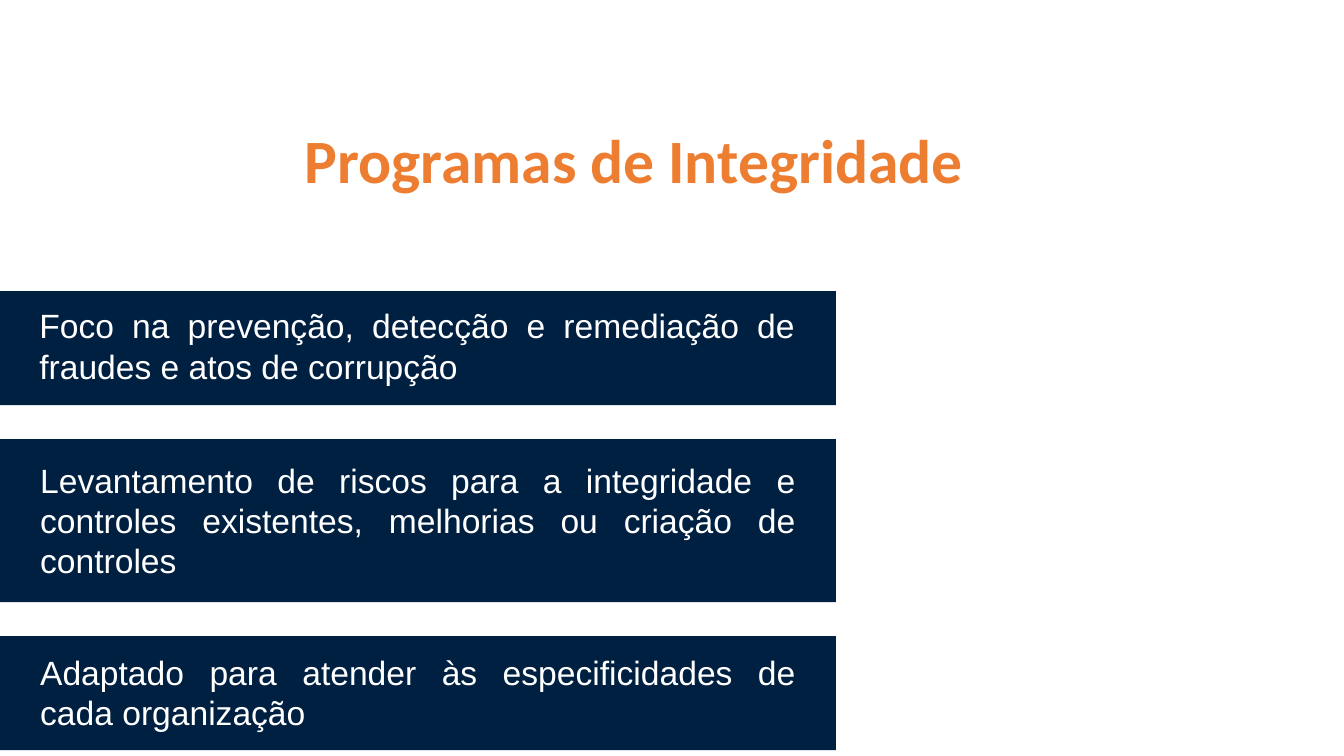
"""Build the "Programas de Integridade" slide."""
from dataclasses import dataclass

from pptx import Presentation
from pptx.dml.color import RGBColor
from pptx.enum import shapes, text
from pptx.util import Pt


@dataclass(frozen=True)
class Theme:
    navy: str = "002042"
    orange: str = "ED7D31"
    white: str = "FFFFFF"
    title_font: str = "Calibri"
    body_font: str = "Arial"
    title_size: int = 44
    body_size: int = 24


THEME = Theme()
BAR_TOP, BAR_GAP, BAR_WIDTH = 208, 24.2, 597
TEXT_WIDTH = 553.7
TOPICS = [
    ("Foco na prevenção, detecção e remediação de fraudes e atos de corrupção",
     81.4, 21, 6.5, 65.5),
    ("Levantamento de riscos para a integridade e controles existentes, "
     "melhorias ou criação de controles", 116.6, 21.6, 11.1, 94.3),
    ("Adaptado para atender às especificidades de cada organização",
     81.4, 21.6, 7.8, 65.5),
]


def add_text(s, content, left, top, width, height, *, font, size, color,
             align, bold=False, spacing=None,
             auto_size=text.MSO_AUTO_SIZE.NONE):
    sp = s.shapes.add_textbox(Pt(left), Pt(top), Pt(width), Pt(height))
    tf = sp.text_frame
    tf.word_wrap = True
    tf.auto_size = auto_size
    tf.vertical_anchor = text.MSO_ANCHOR.TOP
    p = tf.paragraphs[0]
    p.alignment = align
    p.line_spacing = spacing
    r = p.add_run()
    r.text = content
    r.font.name = font
    r.font.size = Pt(size)
    r.font.bold = bold
    r.font.color.rgb = RGBColor.from_string(color)


def add_bar(s, top, height):
    sp = s.shapes.add_shape(shapes.MSO_SHAPE.RECTANGLE, 0, Pt(top),
                            Pt(BAR_WIDTH), Pt(height))
    sp.shadow.inherit = False
    sp.fill.solid()
    sp.fill.fore_color.rgb = RGBColor.from_string(THEME.navy)
    sp.line.fill.background()


def main():
    prs = Presentation()
    prs.slide_width, prs.slide_height = Pt(960), Pt(540)
    s = prs.slides.add_slide(prs.slide_layouts[6])
    add_text(s, "Programas de Integridade", 96, 89.3, 714, 99.4,
             font=THEME.title_font, size=THEME.title_size, color=THEME.orange,
             align=text.PP_ALIGN.CENTER, bold=True, spacing=0.9)
    top = BAR_TOP
    for topic, height, left, offset, text_height in TOPICS:
        add_bar(s, top, height)
        add_text(s, topic, left, top + offset, TEXT_WIDTH, text_height,
                 font=THEME.body_font, size=THEME.body_size,
                 color=THEME.white, align=text.PP_ALIGN.JUSTIFY,
                 auto_size=text.MSO_AUTO_SIZE.SHAPE_TO_FIT_TEXT)
        top += height + BAR_GAP
    prs.save("out.pptx")


if __name__ == "__main__":
    main()
